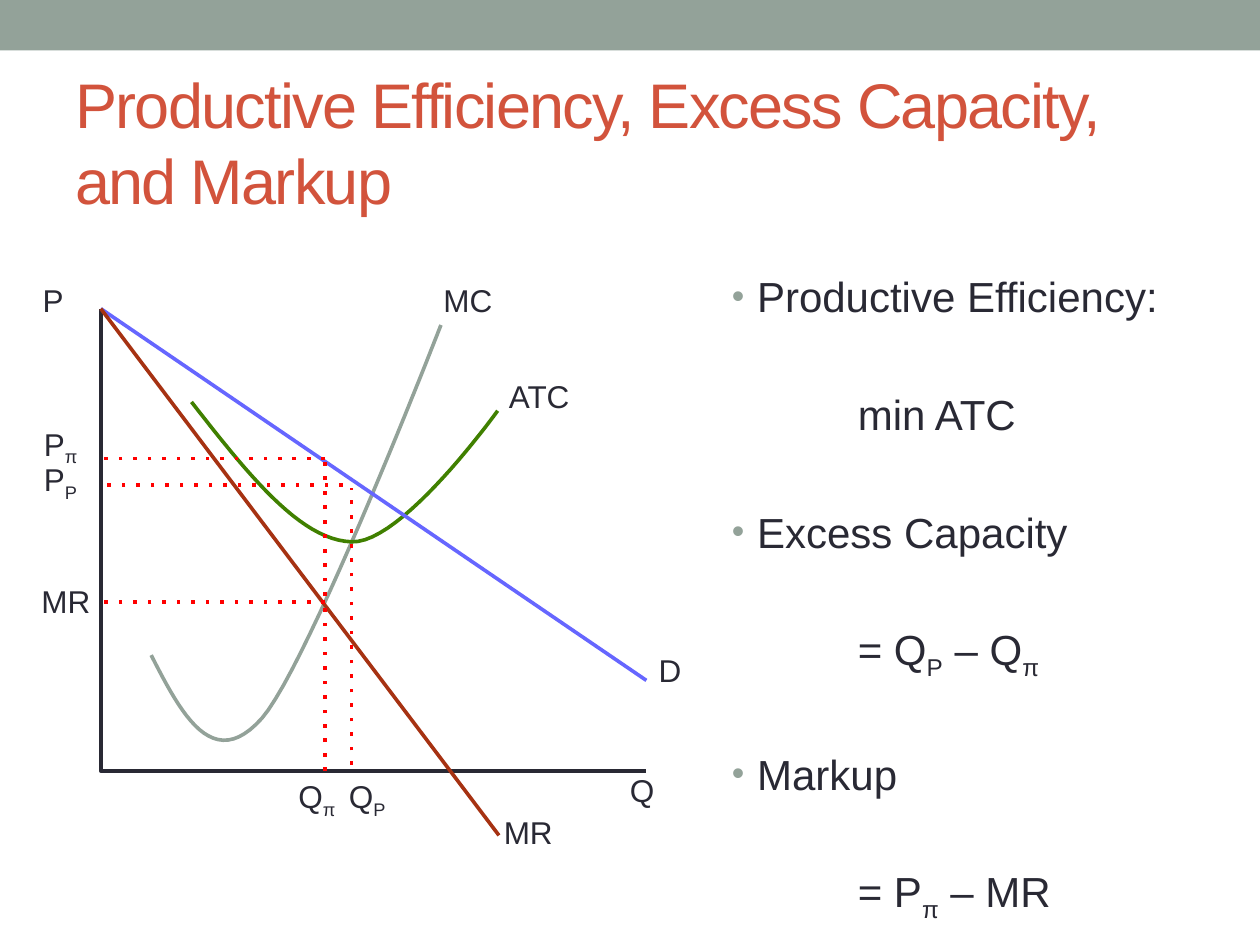
"""Build a slide on productive efficiency, excess capacity and markup."""
from pptx import Presentation, util as u
from pptx.dml.color import RGBColor
from pptx.enum import shapes, text
from pptx.oxml.ns import qn
from lxml import etree

COLORS = {"band": "93A299", "title": "D2533C", "ink": "292934", "atc": "408000",
          "demand": "6666FF", "revenue": "A63212", "guide": "FF0000"}
FONT = "Arial"
LINE_WIDTH = u.Pt(2.08)
TITLE = "Productive Efficiency, Excess Capacity, and Markup"
ORIGIN, AXIS_TOP, AXIS_END = (0.8, 6.12), (0.8, 2.45), (5.13, 6.12)

CURVES = [
    ("band", (1.2, 5.2), [((1.44, 5.67), (1.69, 6.14), (2.08, 5.7)),
                          ((2.46, 5.26), (3.5, 2.58), (3.5, 2.58))]),
    ("atc", (1.52, 3.19), [((1.95, 3.74), (2.38, 4.29), (2.79, 4.3)),
                           ((3.19, 4.32), (3.95, 3.26), (3.95, 3.26))]),
]
STRAIGHTS = [("demand", AXIS_TOP, (5.13, 5.4)), ("revenue", AXIS_TOP, (3.96, 6.63))]
GUIDES = [
    ((2.58, 6.12), (2.58, 4.81)), ((2.58, 4.73), (2.58, 3.64)),
    ((2.58, 3.64), (0.8, 3.64)), ((2.79, 6.07), (2.79, 3.87)),
    ((2.72, 3.85), (0.81, 3.85)), ((2.58, 4.78), (0.8, 4.78)),
]
LABELS = [
    (["Q"], 4.9, 6.07, 0.63, 0.55), (["P"], 0.24, 2.18, 0.52, 0.55),
    (["MC"], 3.42, 2.18, 0.95, 0.55), (["ATC"], 3.94, 2.94, 1.01, 0.55),
    (["D"], 5.13, 5.12, 0.54, 0.55), (["MR"], 3.9, 6.4, 0.87, 0.55),
    (["Q", "π"], 2.27, 6.12, 0.68, 0.55), (["P", "π"], 0.25, 3.32, 0.66, 0.55),
    (["Q", "P"], 2.67, 6.12, 0.51, 0.4), (["P", "P"], 0.25, 3.6, 0.48, 0.4),
    (["MR"], 0.23, 4.57, 0.59, 0.4),
]
DEFINITIONS = [
    ("Productive Efficiency:", ["min ATC"]),
    ("Excess Capacity", ["= Q", "P", " – Q", "π"]),
    ("Markup", ["= P", "π", " – MR"]),
]
FIRST_GAP, LINE_GAP = u.Pt(2.5), u.Pt(38.4)


def rgb(name):
    return RGBColor.from_string(COLORS[name])


def add_runs(paragraph, parts, size, color="ink"):
    """Write parts in turn as normal and subscript text."""
    for index, part in enumerate(parts):
        run = paragraph.add_run()
        run.text = part
        run.font.name, run.font.size = FONT, u.Pt(size)
        run.font.color.rgb = rgb(color)
        if index % 2:
            run.font._element.set("baseline", "-25000")


def add_text_frame(slide, left, top, width, height, wrap=True):
    frame = slide.shapes.add_textbox(*map(u.Inches, (left, top, width, height))).text_frame
    frame.word_wrap = wrap
    return frame


def add_straight(slide, color, start, end, dotted=False):
    line = slide.shapes.add_connector(shapes.MSO_CONNECTOR.STRAIGHT,
                                      *map(u.Inches, start + end))
    line.line.color.rgb, line.line.width = rgb(color), LINE_WIDTH
    props = line._element.spPr
    if dotted:
        etree.SubElement(props.find(qn("a:ln")), qn("a:prstDash"), val="dot")
    etree.SubElement(props, qn("a:effectLst"))


def add_outline(slide, color, points):
    corners = [tuple(map(u.Inches, point)) for point in points]
    builder = slide.shapes.build_freeform(*corners[0])
    builder.add_line_segments(corners[1:], close=False)
    outline = builder.convert_to_shape()
    outline.shadow.inherit = False
    outline.fill.background()
    outline.line.color.rgb, outline.line.width = rgb(color), LINE_WIDTH


def curve_points(start, segments, steps=24):
    """Return points along joined cubic curves."""
    points = [start]
    for control_a, control_b, end in segments:
        begin = points[-1]
        for step in range(1, steps + 1):
            t = step / steps
            weights = ((1 - t) ** 3, 3 * t * (1 - t) ** 2, 3 * t * t * (1 - t), t ** 3)
            corners = (begin, control_a, control_b, end)
            points.append(tuple(sum(w * c[axis] for w, c in zip(weights, corners))
                                for axis in (0, 1)))
    return points


def set_bullet(paragraph):
    props = paragraph._p.get_or_add_pPr()
    props.set("marL", str(u.Inches(0.2)))
    props.set("indent", str(-u.Inches(0.2)))
    bullet_color = etree.SubElement(props, qn("a:buClr"))
    etree.SubElement(bullet_color, qn("a:srgbClr"), val=COLORS["band"])
    etree.SubElement(props, qn("a:buSzPct"), val="85000")
    etree.SubElement(props, qn("a:buFont"), typeface=FONT)
    etree.SubElement(props, qn("a:buChar"), char="•")


def add_heading(slide):
    band = slide.shapes.add_shape(shapes.MSO_SHAPE.RECTANGLE, 0, 0, u.Inches(10), u.Inches(0.4))
    band.shadow.inherit = False
    band.fill.solid()
    band.fill.fore_color.rgb = rgb("band")
    band.line.fill.background()
    title = add_text_frame(slide, 0.5, 0.58, 9, 1.08)
    title.vertical_anchor = text.MSO_ANCHOR.MIDDLE
    add_runs(title.paragraphs[0], [TITLE], 36, "title")
    title.paragraphs[0].runs[0].font._element.set("spc", "-100")


def add_graph(slide):
    add_outline(slide, "ink", [AXIS_TOP, ORIGIN, AXIS_END])
    for color, start, segments in CURVES:
        add_outline(slide, color, curve_points(start, segments))
    for color, start, end in STRAIGHTS:
        add_straight(slide, color, start, end)
    for start, end in GUIDES:
        add_straight(slide, "guide", start, end, dotted=True)
    for parts, *place in LABELS:
        label = add_text_frame(slide, *place, wrap=False)
        label.auto_size = text.MSO_AUTO_SIZE.SHAPE_TO_FIT_TEXT
        add_runs(label.paragraphs[0], parts, 18)


def add_definitions(slide):
    frame = add_text_frame(slide, 5.71, 2.1, 3.79, 5.16)
    for index, (term, formula) in enumerate(DEFINITIONS):
        heading = frame.add_paragraph() if index else frame.paragraphs[0]
        heading.space_before = LINE_GAP if index else FIRST_GAP
        set_bullet(heading)
        add_runs(heading, [term], 24)
        meaning = frame.add_paragraph()
        meaning.space_before = LINE_GAP
        meaning._p.get_or_add_pPr().set("marL", str(u.Inches(1)))
        add_runs(meaning, formula, 24)


def main():
    deck = Presentation()
    deck.slide_width, deck.slide_height = u.Inches(10), u.Inches(7.5)
    slide = deck.slides.add_slide(deck.slide_layouts[6])
    add_heading(slide)
    add_graph(slide)
    add_definitions(slide)
    deck.save("out.pptx")


if __name__ == "__main__":
    main()
